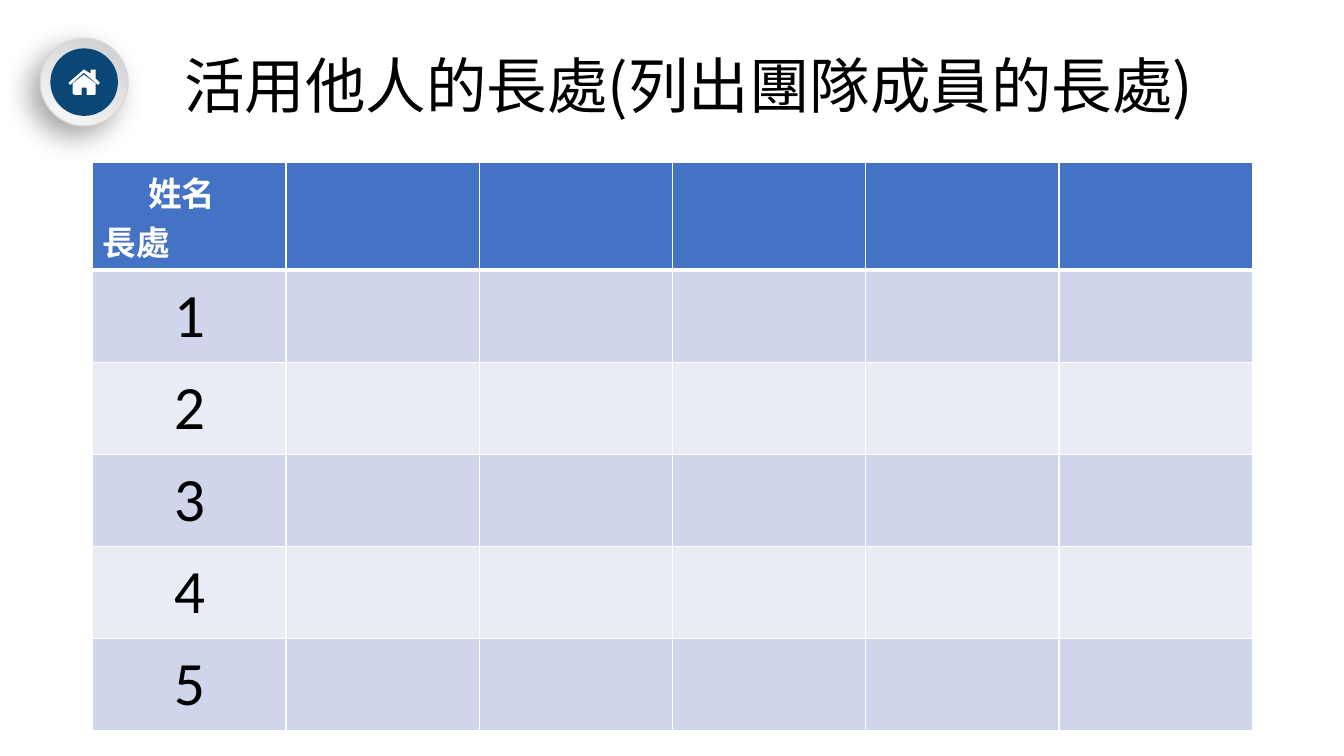
from lxml import etree
from pptx import Presentation
from pptx.dml.color import RGBColor
from pptx.enum.shapes import MSO_SHAPE as Preset
from pptx.enum.text import MSO_ANCHOR as Anchor, PP_ALIGN as Align
from pptx.oxml import parse_xml
from pptx.oxml.ns import nsdecls, qn
from pptx.util import Inches, Pt

COLORS = {
    "white": "FFFFFF", "black": "000000", "navy": "0A4776",
    "ring_dark": "CCCCCC", "ring_light": "FCFCFC", "ring_line": "D9D9D9",
    "header": "4472C4", "odd": "CFD5EA", "even": "E9EBF5",
}
CJK = "Noto Sans CJK SC"
LATIN = "Calibri"
STRENGTHS = 5
MEMBERS = 5
HOUSE_UNIT = 0.01
ROOF = [(30, 15), (29, 15), (15, 3), (2, 15), (1, 15), (0, 13), (14, 1),
        (15, 0), (16, 0), (17, 1), (22, 4), (22, 0), (27, 0), (27, 9), (31, 13)]
WALLS = [(27, 24), (26, 25), (18, 25), (18, 18), (13, 18), (13, 25),
         (6, 25), (4, 24), (4, 14), (15, 5), (27, 14)]


def color(name):
    return RGBColor.from_string(COLORS[name])


def write(para, text, size, font=CJK, ink="black", bold=False, align=Align.LEFT,
          spacing=None, indent=0):
    para.alignment = align
    para.line_spacing = spacing
    if indent:
        para._p.get_or_add_pPr().set("marL", str(Inches(indent)))
    span = para.add_run()
    span.text = text
    span.font.size = Pt(size)
    span.font.name = font
    span.font.bold = bold
    span.font.color.rgb = color(ink)
    east = etree.SubElement(span._r.get_or_add_rPr(), qn("a:ea"))
    east.set("typeface", font)


def paint(shape, fill):
    shape.shadow.inherit = False
    shape.fill.solid()
    shape.fill.fore_color.rgb = color(fill)
    shape.line.fill.background()


def cast_shadow(shape, blur, distance, angle, opacity):
    shape.shadow.inherit = False
    effects = shape._element.spPr.find(qn("a:effectLst"))
    effects.append(parse_xml(
        f'<a:outerShdw {nsdecls("a")} blurRad="{Pt(blur)}" dist="{Pt(distance)}" '
        f'dir="{angle * 60000}" algn="ctr" rotWithShape="0">'
        f'<a:srgbClr val="{COLORS["black"]}"><a:alpha val="{opacity * 1000}"/>'
        f'</a:srgbClr></a:outerShdw>'))


def add_home_button(page, left, top, size):
    button = page.shapes.add_group_shape()
    ring = button.shapes.add_shape(
        Preset.OVAL, Inches(left), Inches(top), Inches(size), Inches(size))
    ring.fill.gradient()
    ring.fill.gradient_angle = 240
    for stop, name, position in zip(
            ring.fill.gradient_stops, ("ring_dark", "ring_light"), (0, 1)):
        stop.color.rgb = color(name)
        stop.position = position
    ring.line.color.rgb = color("ring_line")
    ring.line.width = Pt(1)
    cast_shadow(ring, blur=20, distance=10, angle=136, opacity=34)

    inset = 0.1
    disc_size = size - 2 * inset
    disc = button.shapes.add_shape(
        Preset.OVAL, Inches(left + inset), Inches(top + inset),
        Inches(disc_size), Inches(disc_size))
    paint(disc, "navy")

    builder = button.shapes.build_freeform(*ROOF[0], scale=Inches(HOUSE_UNIT))
    builder.add_line_segments(ROOF[1:], close=True)
    builder.move_to(*WALLS[0])
    builder.add_line_segments(WALLS[1:], close=True)
    house = builder.convert_to_shape(Inches(left + 0.28), Inches(top + 0.31))
    paint(house, "white")


def add_title(page, left, top, width, height):
    box = page.shapes.add_textbox(
        Inches(left), Inches(top), Inches(width), Inches(height))
    frame = box.text_frame
    frame.word_wrap = True
    frame.vertical_anchor = Anchor.MIDDLE
    write(frame.paragraphs[0], "活用他人的長處(列出團隊成員的長處)", 43.2, spacing=0.9)


def style_cell(cell, fill, top=1, bottom=1):
    cell.fill.solid()
    cell.fill.fore_color.rgb = color(fill)
    sides = {"lnL": 1, "lnR": 1, "lnT": top, "lnB": bottom}
    for index, (side, width) in enumerate(sides.items()):
        cell._tc.get_or_add_tcPr().insert(index, parse_xml(
            f'<a:{side} {nsdecls("a")} w="{Pt(width)}"><a:solidFill>'
            f'<a:srgbClr val="{COLORS["white"]}"/></a:solidFill></a:{side}>'))


def add_strength_table(page, left, top, width, height, header_height):
    rows, columns = STRENGTHS + 1, MEMBERS + 1
    table = page.shapes.add_table(
        rows, columns, Inches(left), Inches(top), Inches(width), Inches(height)).table
    body_height = (height - header_height) / STRENGTHS
    for row in range(rows):
        table.rows[row].height = Inches(body_height if row else header_height)
        fill = "header" if row == 0 else "odd" if row % 2 else "even"
        for column in range(columns):
            style_cell(table.cell(row, column), fill,
                       top=3 if row == 1 else 1, bottom=3 if row == 0 else 1)

    corner = table.cell(0, 0).text_frame
    write(corner.paragraphs[0], "姓名", 24, ink="white", bold=True, indent=0.45)
    write(corner.add_paragraph(), "長處", 24, ink="white", bold=True)
    for row in range(1, rows):
        cell = table.cell(row, 0)
        cell.vertical_anchor = Anchor.MIDDLE
        write(cell.text_frame.paragraphs[0], str(row), 44, font=LATIN, align=Align.CENTER)


def main():
    deck = Presentation()
    deck.slide_width, deck.slide_height = Inches(13.33), Inches(7.5)
    page = deck.slides.add_slide(deck.slide_layouts[6])
    add_home_button(page, 0.4, 0.38, 0.87)
    add_title(page, 1.73, 0.4, 10.69, 0.97)
    add_strength_table(page, 0.92, 1.61, 11.5, 5.64, header_height=1.07)
    deck.save("out.pptx")


if __name__ == "__main__":
    main()
